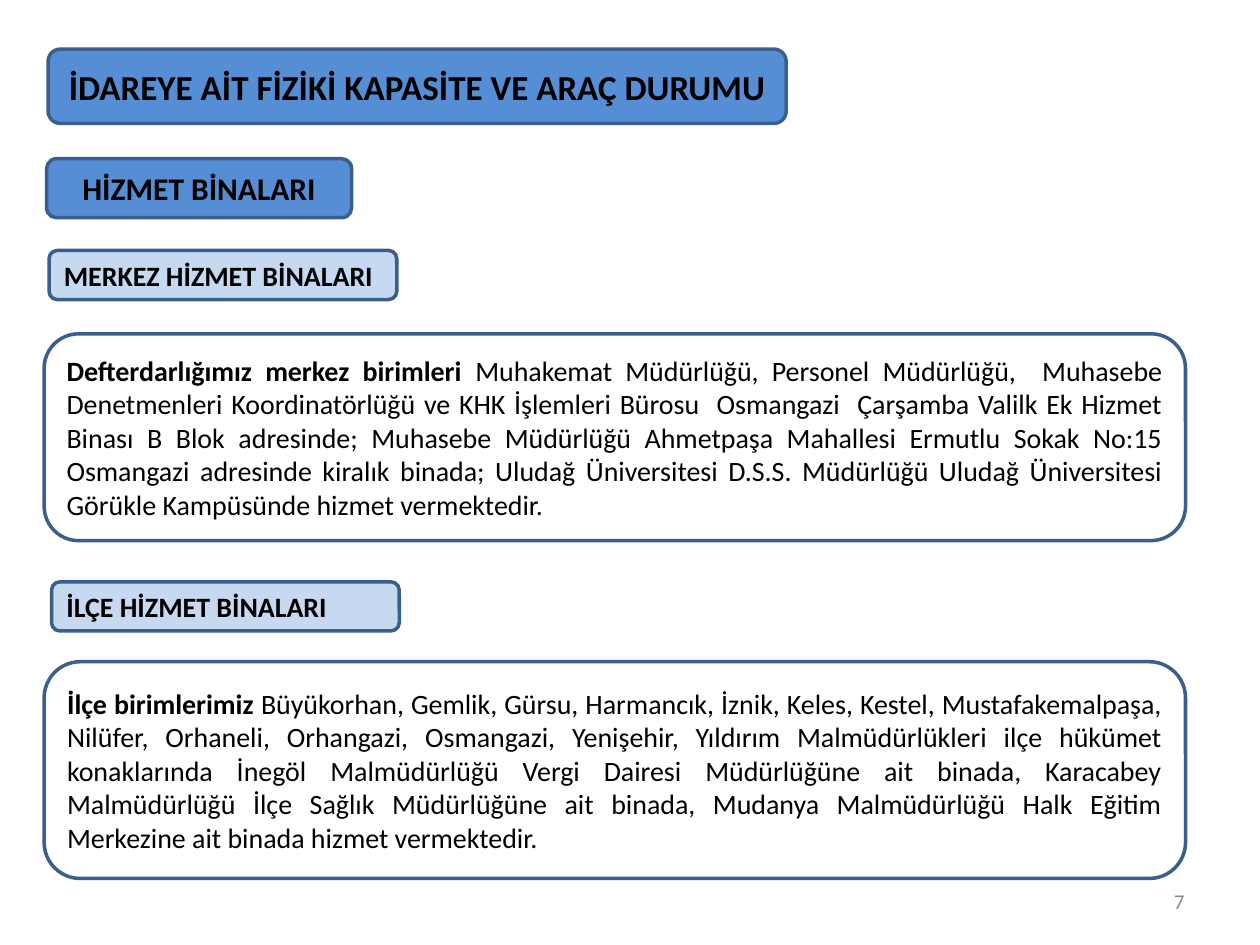
from dataclasses import dataclass

from pptx import Presentation
from pptx import util as u
from pptx.dml.color import RGBColor
from pptx.enum import shapes, text

BLUE = RGBColor(0x55, 0x8E, 0xD5)
PALE_BLUE = RGBColor(0xC6, 0xD9, 0xF1)
OUTLINE = RGBColor(0x3A, 0x5F, 0x8C)
BLACK = RGBColor(0, 0, 0)
GREY = RGBColor(0x89, 0x89, 0x89)
FONT = "Calibri"

LEFT, CENTER = text.PP_ALIGN.LEFT, text.PP_ALIGN.CENTER
RIGHT, JUSTIFY = text.PP_ALIGN.RIGHT, text.PP_ALIGN.JUSTIFY


@dataclass(frozen=True)
class Frame:
    """Position and size in centimetres."""
    left: float
    top: float
    width: float
    height: float

    def lengths(self) -> tuple:
        return u.Cm(self.left), u.Cm(self.top), u.Cm(self.width), u.Cm(self.height)


@dataclass(frozen=True)
class Box:
    frame: Frame
    fill: RGBColor | None
    size: int
    align: text.PP_ALIGN
    bold_text: str
    plain_text: str = ""


TITLE = "İDAREYE AİT FİZİKİ KAPASİTE VE ARAÇ DURUMU"
TITLE_FRAME = Frame(0.97, 0.99, 14.88, 1.5)
PAGE_NUMBER_FRAME = Frame(18.21, 17.65, 5.92, 1.02)


def heading(left: float, top: float, label: str) -> Box:
    return Box(Frame(left, top, 7.01, 0.99), PALE_BLUE, 16, LEFT, label)


def description(top: float, height: float, opening: str, rest: str) -> Box:
    return Box(Frame(0.89, top, 23.01, height), None, 16, JUSTIFY, opening, rest)


BOXES = [
    Box(Frame(0.94, 3.2, 6.15, 1.19), BLUE, 18, CENTER, "HİZMET BİNALARI"),
    heading(0.99, 5.05, "MERKEZ HİZMET BİNALARI"),
    description(
        6.73, 4.17, "Defterdarlığımız merkez birimleri ",
        "Muhakemat Müdürlüğü, Personel Müdürlüğü,  Muhasebe Denetmenleri "
        "Koordinatörlüğü ve KHK İşlemleri Bürosu  Osmangazi  Çarşamba Valilk Ek "
        "Hizmet Binası B Blok adresinde; Muhasebe Müdürlüğü Ahmetpaşa Mahallesi "
        "Ermutlu Sokak No:15 Osmangazi adresinde kiralık binada; Uludağ "
        "Üniversitesi D.S.S. Müdürlüğü Uludağ Üniversitesi Görükle Kampüsünde "
        "hizmet vermektedir."),
    heading(1.04, 11.73, "İLÇE HİZMET BİNALARI"),
    description(
        13.34, 4.37, "İlçe birimlerimiz ",
        "Büyükorhan, Gemlik, Gürsu, Harmancık, İznik, Keles, Kestel, "
        "Mustafakemalpaşa, Nilüfer, Orhaneli, Orhangazi, Osmangazi, Yenişehir, "
        "Yıldırım Malmüdürlükleri ilçe hükümet konaklarında İnegöl Malmüdürlüğü "
        "Vergi Dairesi Müdürlüğüne ait binada, Karacabey Malmüdürlüğü İlçe Sağlık "
        "Müdürlüğüne ait binada, Mudanya Malmüdürlüğü Halk Eğitim Merkezine ait "
        "binada hizmet vermektedir."),
]


def write_text(shape, size: int, align: text.PP_ALIGN, bold_text: str = "",
               plain_text: str = "", color: RGBColor = BLACK) -> None:
    text_frame = shape.text_frame
    text_frame.word_wrap = True
    text_frame.auto_size = text.MSO_AUTO_SIZE.NONE
    text_frame.vertical_anchor = text.MSO_ANCHOR.MIDDLE
    paragraph = text_frame.paragraphs[0]
    paragraph.alignment = align
    for content, bold in ((bold_text, True), (plain_text, False)):
        if content:
            run = paragraph.add_run()
            run.text = content
            run.font.name = FONT
            run.font.size = u.Pt(size)
            run.font.bold = bold
            run.font.color.rgb = color


def add_rounded_panel(slide, frame: Frame, fill: RGBColor | None):
    panel = slide.shapes.add_shape(
        shapes.MSO_SHAPE.ROUNDED_RECTANGLE, *frame.lengths())
    panel.shadow.inherit = False
    panel.line.color.rgb = OUTLINE
    panel.line.width = u.Pt(2)
    if fill is None:
        panel.fill.background()
    else:
        panel.fill.solid()
        panel.fill.fore_color.rgb = fill
    return panel


def add_box(slide, box: Box) -> None:
    panel = add_rounded_panel(slide, box.frame, box.fill)
    write_text(panel, box.size, box.align, box.bold_text, box.plain_text)


def place_title(slide) -> None:
    """Set the title placeholder in front of its rounded panel."""
    panel = add_rounded_panel(slide, TITLE_FRAME, BLUE)
    title = slide.shapes.title
    title.left, title.top, title.width, title.height = TITLE_FRAME.lengths()
    write_text(title, 20, CENTER, TITLE)
    panel.element.addnext(title.element)


def add_page_number(slide, number: int) -> None:
    text_box = slide.shapes.add_textbox(*PAGE_NUMBER_FRAME.lengths())
    write_text(text_box, 12, RIGHT, plain_text=str(number), color=GREY)


def main() -> None:
    presentation = Presentation()
    presentation.slide_width = u.Cm(25.4)
    presentation.slide_height = u.Cm(19.05)
    title_only = presentation.slide_layouts.get_by_name("Title Only")
    slide = presentation.slides.add_slide(title_only)
    for box in BOXES:
        add_box(slide, box)
    place_title(slide)
    add_page_number(slide, 7)
    presentation.save("out.pptx")


if __name__ == "__main__":
    main()
